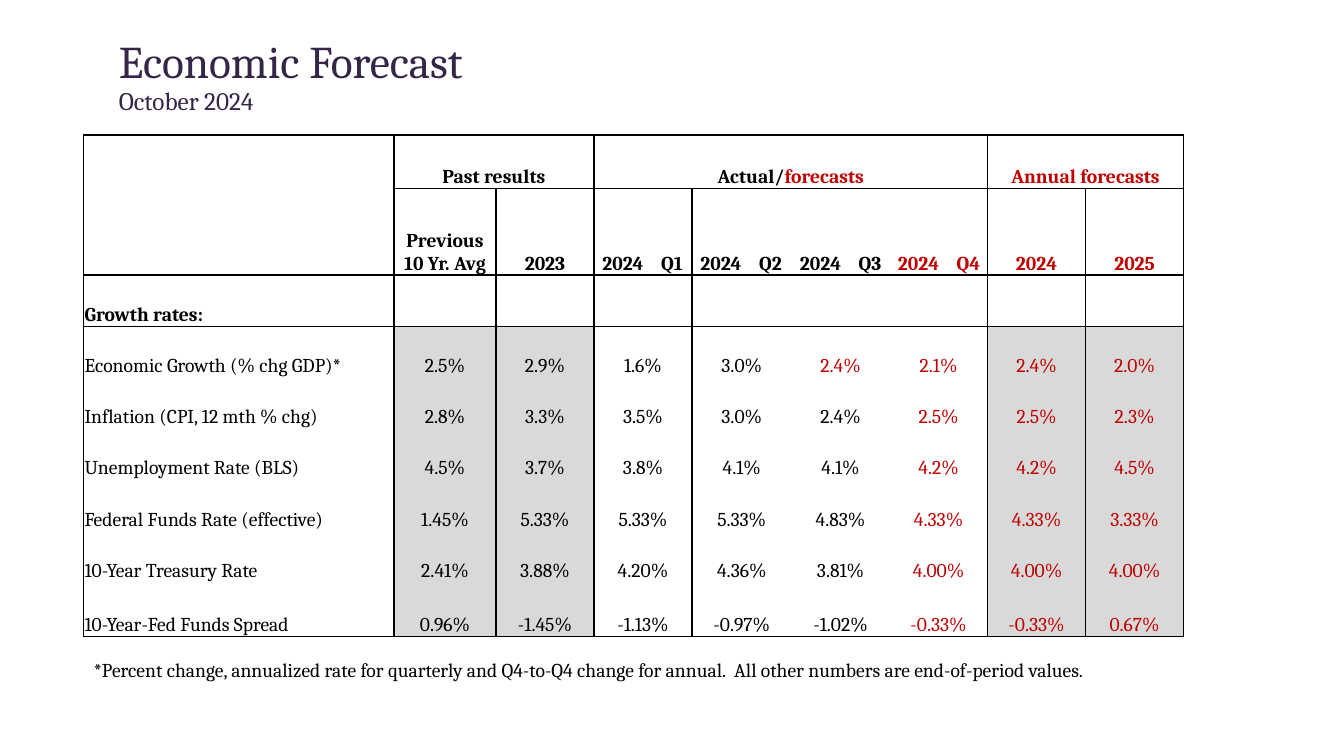
import dataclasses

import lxml.etree
import pptx
import pptx.dml.color
import pptx.enum.text
import pptx.oxml.ns
import pptx.table
import pptx.text.text
import pptx.util

Cm = pptx.util.Cm
Pt = pptx.util.Pt
RGBColor = pptx.dml.color.RGBColor
PP_ALIGN = pptx.enum.text.PP_ALIGN
MSO_ANCHOR = pptx.enum.text.MSO_ANCHOR
qn = pptx.oxml.ns.qn

BLACK = RGBColor(0x00, 0x00, 0x00)
WHITE = RGBColor(0xFF, 0xFF, 0xFF)
RED = RGBColor(0xC0, 0x00, 0x00)
GREY = RGBColor(0xD9, 0xD9, 0xD9)
PLUM = RGBColor(0x34, 0x25, 0x49)

FONT = "Cambria"
NO_GRID_STYLE = "{2D5ABB26-0587-4C30-8999-92F81FD0307C}"
COL_WIDTHS = [7.82, 2.57, 2.47, 2.47, 2.51, 2.47, 2.47, 2.47, 2.47]
ROW_HEIGHTS = [1.34, 2.19] + [1.29] * 6 + [1.36]
COL_LINES = {0, 1, 3, 7, 9}
ROW_LINES = {0, 1, 2, 9}
GREY_COLS = {1, 2, 7, 8}


@dataclasses.dataclass
class Band:
    first: int
    last: int
    runs: list[tuple[str, RGBColor]]


@dataclasses.dataclass
class Row:
    label: str
    values: list[str]
    first_red: int = 6
    bold: bool = False
    shaded: bool = True


BANDS = [
    Band(1, 2, [("Past results", BLACK)]),
    Band(3, 6, [("Actual/", BLACK), ("forecasts", RED)]),
    Band(7, 8, [("Annual forecasts", RED)]),
]

ROWS = [
    Row("", ["Previous 10 Yr. Avg", "2023", "2024\tQ1", "2024\tQ2", "2024\tQ3",
             "2024\tQ4", "2024", "2025"], bold=True, shaded=False),
    Row("Growth rates:", [""] * 8, bold=True, shaded=False),
    Row("Economic Growth (% chg GDP)*",
        ["2.5%", "2.9%", "1.6%", "3.0%", "2.4%", "2.1%", "2.4%", "2.0%"], first_red=5),
    Row("Inflation (CPI, 12 mth % chg)",
        ["2.8%", "3.3%", "3.5%", "3.0%", "2.4%", "2.5%", "2.5%", "2.3%"]),
    Row("Unemployment Rate (BLS)",
        ["4.5%", "3.7%", "3.8%", "4.1%", "4.1%", "4.2%", "4.2%", "4.5%"]),
    Row("Federal Funds Rate (effective)",
        ["1.45%", "5.33%", "5.33%", "5.33%", "4.83%", "4.33%", "4.33%", "3.33%"]),
    Row("10-Year Treasury Rate",
        ["2.41%", "3.88%", "4.20%", "4.36%", "3.81%", "4.00%", "4.00%", "4.00%"]),
    Row("10-Year-Fed Funds Spread",
        ["0.96%", "-1.45%", "-1.13%", "-0.97%", "-1.02%", "-0.33%", "-0.33%", "0.67%"]),
]


def write(p: pptx.text.text._Paragraph, text: str, *, size: float = 14,
          color: RGBColor = BLACK, bold: bool = False) -> None:
    r = p.add_run()
    r.text = text
    r.font.name = FONT
    r.font.size = Pt(size)
    r.font.bold = bold
    r.font.color.rgb = color


def draw_borders(cell: pptx.table._Cell, row: int, col: int) -> None:
    right = col + (cell.span_width if cell.is_merge_origin else 1)
    bottom = row + (cell.span_height if cell.is_merge_origin else 1)
    sides = {
        "a:lnL": col in COL_LINES,
        "a:lnR": right in COL_LINES,
        "a:lnT": row in ROW_LINES and (row, col) != (1, 0),
        "a:lnB": bottom in ROW_LINES and (bottom, col) != (1, 0),
    }
    tc_pr = cell._tc.get_or_add_tcPr()
    for tag, drawn in sides.items():
        if drawn:
            ln = lxml.etree.SubElement(tc_pr, qn(tag), w=str(Pt(1)))
            fill = lxml.etree.SubElement(ln, qn("a:solidFill"))
            lxml.etree.SubElement(fill, qn("a:srgbClr"), val=str(BLACK))


def format_cell(cell: pptx.table._Cell, row: int, col: int, fill: RGBColor) -> None:
    draw_borders(cell, row, col)
    cell.fill.solid()
    cell.fill.fore_color.rgb = fill
    cell.vertical_anchor = MSO_ANCHOR.BOTTOM
    cell.margin_left = cell.margin_right = cell.margin_top = Cm(0.02)
    cell.margin_bottom = Cm(0)


def fill_cell(cell: pptx.table._Cell, col: int, runs: list[tuple[str, RGBColor]],
              bold: bool) -> None:
    p = cell.text_frame.paragraphs[0]
    p.alignment = PP_ALIGN.CENTER if col else PP_ALIGN.LEFT
    if "\t" in runs[0][0]:
        p.alignment = PP_ALIGN.LEFT
        cell.margin_left = Cm(0.21)
        tabs = lxml.etree.SubElement(p._p.get_or_add_pPr(), qn("a:tabLst"))
        lxml.etree.SubElement(tabs, qn("a:tab"), pos=str(Cm(1.48)), algn="l")
    for text, color in runs:
        write(p, text, color=color, bold=bold)


def add_title(slide) -> None:
    slide.placeholders[1].element.getparent().remove(slide.placeholders[1].element)
    sp = slide.shapes.title
    sp.left, sp.top, sp.width, sp.height = Cm(2.74), Cm(0.94), Cm(27.74), Cm(2.03)
    tf = sp.text_frame
    tf.word_wrap = True
    tf.auto_size = pptx.enum.text.MSO_AUTO_SIZE.NONE
    tf.vertical_anchor = MSO_ANCHOR.MIDDLE
    p = tf.paragraphs[0]
    p.alignment = PP_ALIGN.LEFT
    p.line_spacing = 0.9
    write(p, "Economic Forecast", size=32.4, color=PLUM)
    p.add_line_break()
    lxml.etree.SubElement(p._p[-1], qn("a:rPr"), sz="3240")
    write(p, "October 2024", size=18, color=PLUM)


def add_forecast_table(slide) -> None:
    frame = slide.shapes.add_table(len(ROW_HEIGHTS), len(COL_WIDTHS), Cm(2.11), Cm(3.4),
                                   Cm(sum(COL_WIDTHS)), Cm(sum(ROW_HEIGHTS)))
    table = frame.table
    table.first_row = table.horz_banding = False
    table._tbl.tblPr.find(qn("a:tableStyleId")).text = NO_GRID_STYLE
    for column, width in zip(table.columns, COL_WIDTHS):
        column.width = Cm(width)
    for line, height in zip(table.rows, ROW_HEIGHTS):
        line.height = Cm(height)

    table.cell(0, 0).merge(table.cell(1, 0))
    for band in BANDS:
        table.cell(0, band.first).merge(table.cell(0, band.last))
    for col in range(len(COL_WIDTHS)):
        format_cell(table.cell(0, col), 0, col, WHITE)
    for band in BANDS:
        fill_cell(table.cell(0, band.first), band.first, band.runs, True)

    for i, row in enumerate(ROWS, start=1):
        for col, text in enumerate([row.label] + row.values):
            cell = table.cell(i, col)
            format_cell(cell, i, col, GREY if row.shaded and col in GREY_COLS else WHITE)
            if text:
                color = RED if col >= row.first_red else BLACK
                fill_cell(cell, col, [(text, color)], row.bold)


def add_footnote(slide) -> None:
    tf = slide.shapes.add_textbox(Cm(2.11), Cm(16.46), Cm(29.41), Cm(0.86)).text_frame
    tf.word_wrap = True
    write(tf.paragraphs[0],
          "*Percent change, annualized rate for quarterly and Q4-to-Q4 change for annual.  "
          "All other numbers are end-of-period values.")


def main() -> None:
    prs = pptx.Presentation()
    prs.slide_width, prs.slide_height = Cm(33.87), Cm(19.05)
    slide = prs.slides.add_slide(prs.slide_layouts[0])
    add_title(slide)
    add_forecast_table(slide)
    add_footnote(slide)
    prs.save("out.pptx")


if __name__ == "__main__":
    main()
